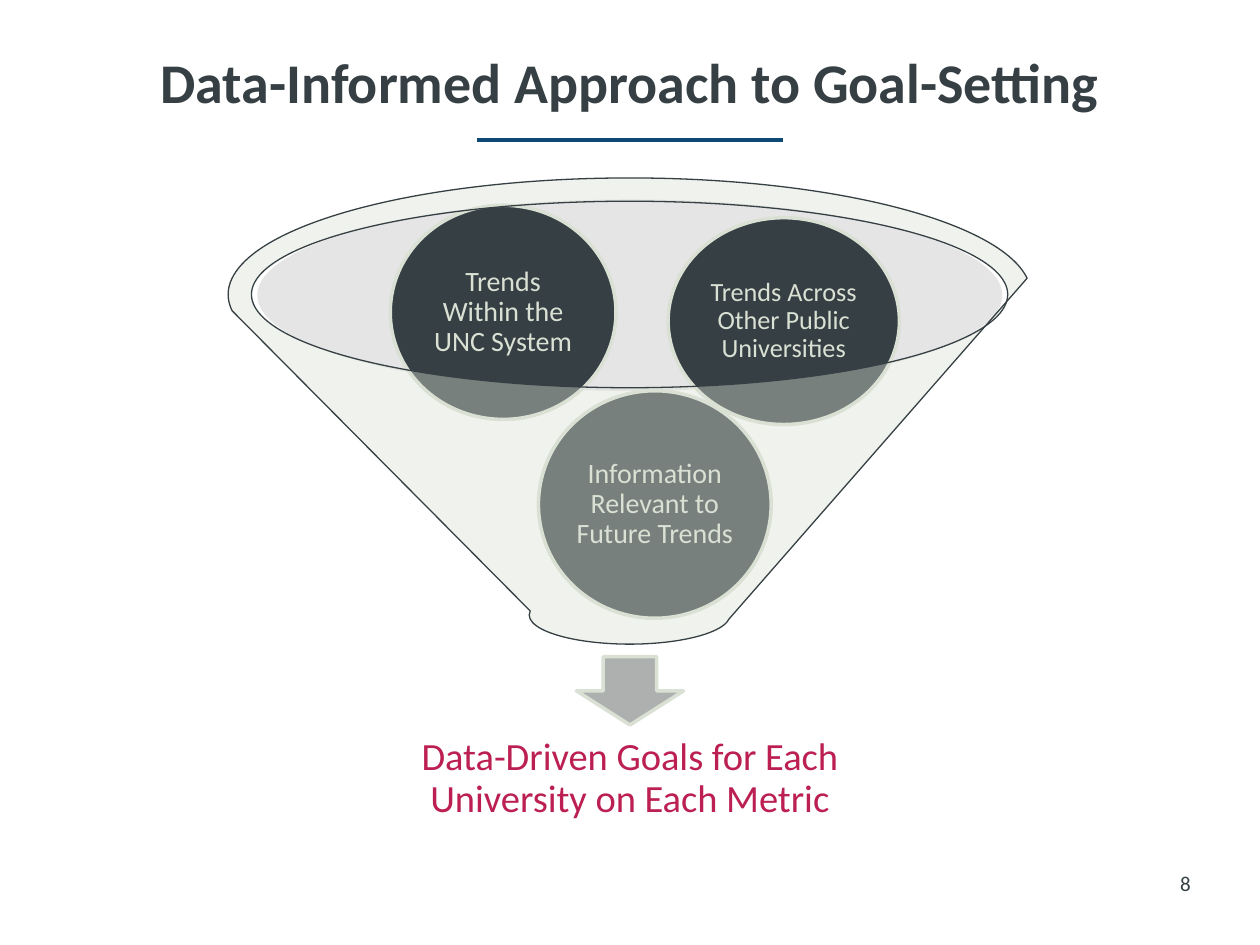
from dataclasses import dataclass

from lxml import etree
from pptx import Presentation
from pptx.dml.color import RGBColor
from pptx.enum.shapes import MSO_CONNECTOR, MSO_SHAPE
from pptx.enum.text import MSO_ANCHOR, PP_ALIGN
from pptx.oxml.ns import qn
from pptx.util import Pt

ELLIPSE = MSO_SHAPE.OVAL
DOWN_ARROW = MSO_SHAPE.DOWN_ARROW
FUNNEL = MSO_SHAPE.FUNNEL
STRAIGHT = MSO_CONNECTOR.STRAIGHT
TOP, MIDDLE = MSO_ANCHOR.TOP, MSO_ANCHOR.MIDDLE
CENTER, RIGHT = PP_ALIGN.CENTER, PP_ALIGN.RIGHT

SLATE = RGBColor(0x36, 0x40, 0x44)
NAVY = RGBColor(0x0E, 0x48, 0x75)
SAGE = RGBColor(0xDA, 0xE1, 0xD4)
SILVER = RGBColor(0xBF, 0xC0, 0xC1)
GRAY = RGBColor(0xAE, 0xB0, 0xB0)
CRIMSON = RGBColor(0xBC, 0x1F, 0x51)

FONT = "Calibri"


@dataclass(frozen=True)
class Area:
    left: float
    top: float
    width: float
    height: float

    def lengths(self) -> tuple:
        return Pt(self.left), Pt(self.top), Pt(self.width), Pt(self.height)


@dataclass(frozen=True)
class TextStyle:
    size: float
    color: RGBColor
    align: PP_ALIGN = CENTER
    anchor: MSO_ANCHOR = MIDDLE
    inset: float = 0
    line_spacing: float = 1.0
    bold: bool = False


@dataclass(frozen=True)
class Input:
    text: str
    area: Area
    size: float


INPUTS = (
    Input("Information Relevant to Future Trends", Area(307.7, 223.3, 133, 130), 16),
    Input("Trends Within the UNC System", Area(223, 117.3, 129, 122.4), 16),
    Input("Trends Across Other Public Universities", Area(381.8, 124.4, 132.2, 118.2), 15),
)


def write_text(shape, text: str, style: TextStyle) -> None:
    frame = shape.text_frame
    frame.word_wrap = True
    frame.vertical_anchor = style.anchor
    frame.margin_left = frame.margin_right = Pt(style.inset)
    frame.margin_top = frame.margin_bottom = Pt(style.inset)
    para = frame.paragraphs[0]
    para.alignment = style.align
    para.line_spacing = style.line_spacing
    span = para.add_run()
    span.text = text
    span.font.name = FONT
    span.font.size = Pt(style.size)
    span.font.bold = style.bold
    span.font.color.rgb = style.color


def add_text(page, text: str, area: Area, style: TextStyle) -> None:
    write_text(page.shapes.add_textbox(*area.lengths()), text, style)


def add_figure(page, kind: MSO_SHAPE, area: Area, fill: RGBColor,
               line: RGBColor | None = None, line_width: float = 2,
               opacity: int = 100):
    shape = page.shapes.add_shape(kind, *area.lengths())
    shape.shadow.inherit = False
    shape.fill.solid()
    shape.fill.fore_color.rgb = fill
    if opacity < 100:
        color = shape.fill._xPr.find(qn("a:solidFill"))[0]
        etree.SubElement(color, qn("a:alpha")).set("val", str(opacity * 1000))
    if line is None:
        shape.line.fill.background()
    else:
        shape.line.color.rgb = line
        shape.line.width = Pt(line_width)
    return shape


def add_rule(page, left: float, right: float, height: float) -> None:
    rule = page.shapes.add_connector(STRAIGHT, Pt(left), Pt(height), Pt(right), Pt(height))
    rule.line.color.rgb = NAVY
    rule.line.width = Pt(2)
    etree.SubElement(rule._element.spPr, qn("a:effectLst"))


def add_input(page, entry: Input) -> None:
    circle = add_figure(page, ELLIPSE, entry.area, SLATE, SAGE)
    style = TextStyle(entry.size, SAGE, inset=1.5, line_spacing=0.9)
    write_text(circle, entry.text, style)


def main() -> None:
    deck = Presentation()
    deck.slide_width, deck.slide_height = Pt(720), Pt(540)
    page = deck.slides.add_slide(deck.slide_layouts[6])

    add_rule(page, 272.4, 447.6, 80)
    add_text(page, "Data-Informed Approach to Goal-Setting", Area(36, 21.6, 648, 58.4),
             TextStyle(32, SLATE, anchor=TOP, inset=5.5, bold=True))
    add_text(page, "8", Area(648, 496.8, 32.4, 16),
             TextStyle(12, SLATE, align=RIGHT))

    add_figure(page, ELLIPSE, Area(147, 114, 425.8, 109.4), SILVER, opacity=40)
    add_figure(page, DOWN_ARROW, Area(329.4, 375.3, 61.2, 39), GRAY, SAGE)
    add_text(page, "Data-Driven Goals for Each University on Each Metric",
             Area(213.5, 408.3, 293, 73.4),
             TextStyle(22, CRIMSON, inset=12.2, line_spacing=0.9))
    for entry in INPUTS:
        add_input(page, entry)
    add_figure(page, FUNNEL, Area(130.4, 101.7, 458.8, 266.4), SAGE, SLATE, 0.75, opacity=40)

    deck.save("out.pptx")


if __name__ == "__main__":
    main()
